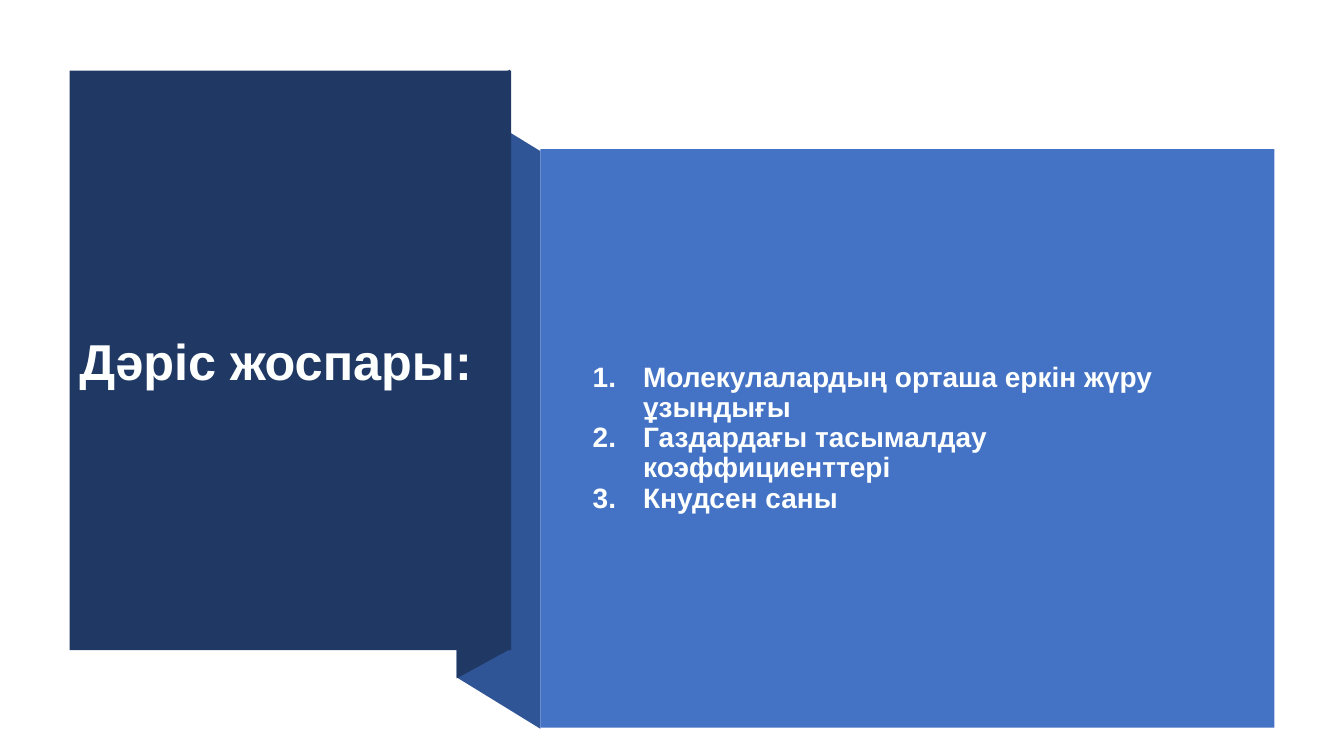
from dataclasses import dataclass

from pptx import Presentation
from pptx.dml.color import RGBColor
from pptx.enum import shapes, text
from pptx.oxml.xmlchemy import OxmlElement
from pptx.util import Inches, Pt


@dataclass(frozen=True)
class Theme:
    navy: RGBColor = RGBColor(0x20, 0x38, 0x64)
    fold_blue: RGBColor = RGBColor(0x2F, 0x55, 0x97)
    panel_blue: RGBColor = RGBColor(0x44, 0x72, 0xC4)
    text_color: RGBColor = RGBColor(0xFE, 0xFF, 0xFF)
    font_name: str = "Arial"
    title_size: int = 36
    list_size: int = 20


THEME = Theme()

PLAN_ITEMS = [
    "Молекулалардың орташа еркін жүру ұзындығы",
    "Газдардағы тасымалдау коэффициенттері",
    "Кнудсен саны",
]


def paint(shape, color):
    shape.shadow.inherit = False
    shape.fill.solid()
    shape.fill.fore_color.rgb = color
    shape.line.fill.background()


def add_panel(slide, left, top, width, height, color):
    panel = slide.shapes.add_shape(
        shapes.MSO_SHAPE.RECTANGLE,
        Inches(left), Inches(top), Inches(width), Inches(height))
    paint(panel, color)


def add_fold(slide, points, color):
    corners = [(Inches(x), Inches(y)) for x, y in points]
    builder = slide.shapes.build_freeform(*corners[0])
    builder.add_line_segments(corners[1:], close=True)
    paint(builder.convert_to_shape(), color)


def add_text(slide, left, top, width, height, lines, size):
    box = slide.shapes.add_textbox(
        Inches(left), Inches(top), Inches(width), Inches(height))
    frame = box.text_frame
    frame.word_wrap = True
    frame.vertical_anchor = text.MSO_ANCHOR.MIDDLE
    frame.text = "\n".join(lines)
    for paragraph in frame.paragraphs:
        font = paragraph.font
        font.name = THEME.font_name
        font.size = Pt(size)
        font.bold = True
        font.color.rgb = THEME.text_color
    return frame


def number_paragraphs(frame, indent):
    for paragraph in frame.paragraphs:
        paragraph.line_spacing = 0.9
        properties = paragraph._p.get_or_add_pPr()
        properties.set("marL", str(Inches(indent)))
        properties.set("indent", str(-Inches(indent)))
        numbering = OxmlElement("a:buAutoNum")
        numbering.set("type", "arabicPeriod")
        properties.insert_element_before(
            numbering, "a:tabLst", "a:defRPr", "a:extLst")


def main():
    presentation = Presentation()
    presentation.slide_width = Inches(13.33)
    presentation.slide_height = Inches(7.5)
    slide = presentation.slides.add_slide(presentation.slide_layouts[6])

    # Folded ribbon behind the two panels
    add_fold(slide, [(5.36, 7.23), (4.53, 6.72), (4.53, 0.99), (5.36, 1.5)],
             THEME.fold_blue)
    add_fold(slide, [(5.06, 6.44), (4.53, 6.73), (4.53, 0.98), (5.06, 0.69)],
             THEME.navy)

    # Title panel and list panel
    add_panel(slide, 0.69, 0.7, 4.38, 5.75, THEME.navy)
    add_panel(slide, 5.36, 1.48, 7.28, 5.74, THEME.panel_blue)

    # Lecture plan
    plan = add_text(slide, 5.78, 1.98, 6.51, 4.74, PLAN_ITEMS, THEME.list_size)
    number_paragraphs(plan, 0.5)

    # Title
    add_text(slide, 0.69, 3.22, 4.73, 0.71, ["Дәріс жоспары:"],
             THEME.title_size)

    presentation.save("out.pptx")


if __name__ == "__main__":
    main()
